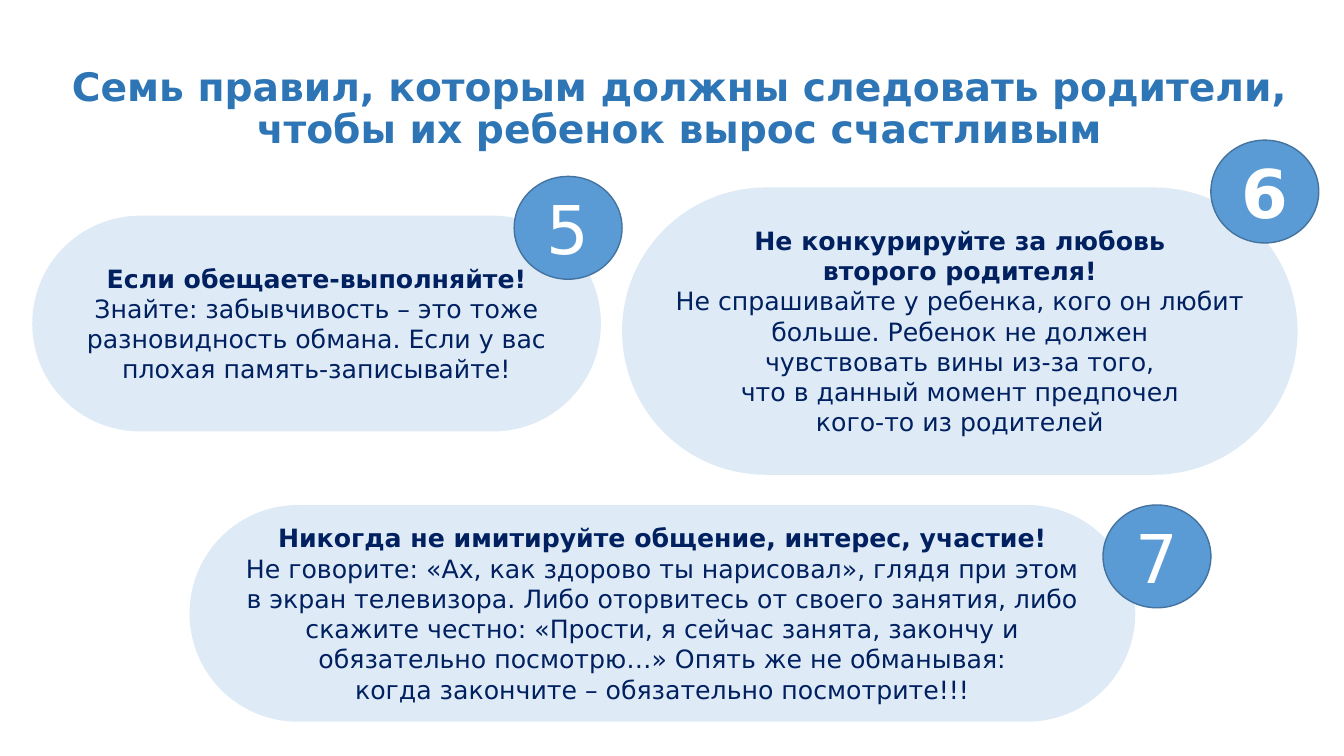
from pptx import Presentation
from pptx.dml.color import RGBColor
from pptx.enum.shapes import MSO_SHAPE as Shape
from pptx.enum.text import MSO_ANCHOR as Anchor, MSO_AUTO_SIZE as Fit, PP_ALIGN as Align
from pptx.util import Inches, Pt

BLUE, PALE, EDGE = "5B9BD5", "DEEBF7", "43739E"
NAVY, HEAD, WHITE = "002060", "2E75B6", "FFFFFF"

TITLE = "Семь правил, которым должны следовать родители, чтобы их ребенок вырос счастливым"
RULES = [
    ("5", False, (0.32, 2.14, 5.64, 2.14), (5.1, 1.75),
     ["Если обещаете-выполняйте!"],
     ["Знайте: забывчивость – это тоже разновидность обмана. Если у вас плохая память-записывайте!"]),
    ("6", True, (6.17, 1.86, 6.7, 2.85), (12.01, 1.39),
     ["Не конкурируйте за любовь", "второго родителя!"],
     ["Не спрашивайте у ребенка, кого он любит больше. Ребенок не должен",
      "чувствовать вины из-за того,",
      "что в данный момент предпочел",
      "кого-то из родителей"]),
    ("7", False, (1.88, 5.01, 9.38, 2.15), (10.94, 5.01),
     ["Никогда не имитируйте общение, интерес, участие!"],
     ["Не говорите: «Ах, как здорово ты нарисовал», глядя при этом",
      "в экран телевизора. Либо оторвитесь от своего занятия, либо скажите честно: "
      "«Прости, я сейчас занята, закончу и обязательно посмотрю…» Опять же не обманывая:",
      "когда закончите – обязательно посмотрите!!!"]),
]


def paint(target, color):
    """Give a fill or a line a solid colour."""
    target.solid()
    target.fore_color.rgb = RGBColor.from_string(color)


class Deck:
    font = "DejaVu Sans"

    def __init__(self):
        self.prs = Presentation()
        self.prs.slide_width, self.prs.slide_height = Inches(13.33), Inches(7.5)
        self.slide = self.prs.slides.add_slide(self.prs.slide_layouts[5])

    def label(self, frame, lines, size, color, anchor=Anchor.MIDDLE):
        """Fill a frame with centred (text, bold) paragraphs."""
        form = {"word_wrap": True, "auto_size": Fit.NONE, "vertical_anchor": anchor}
        for key, value in form.items():
            setattr(frame, key, value)
        for i, (text, bold) in enumerate(lines):
            para = frame.add_paragraph() if i else frame.paragraphs[0]
            para.alignment = Align.CENTER
            run = para.add_run()
            run.text = text
            for key, value in {"name": self.font, "size": Pt(size), "bold": bold}.items():
                setattr(run.font, key, value)
            paint(run.font.fill, color)

    def title(self, text, box):
        head = self.slide.shapes.title
        for key, value in zip(("left", "top", "width", "height"), box):
            setattr(head, key, Inches(value))
        self.label(head.text_frame, [(text, True)], 28, HEAD, Anchor.BOTTOM)
        head.text_frame.paragraphs[0].line_spacing = 0.9

    def shape(self, kind, box, fill):
        item = self.slide.shapes.add_shape(kind, *map(Inches, box))
        item.shadow.inherit = False
        paint(item.fill, fill)
        return item

    def card(self, box, heads, body):
        item = self.shape(Shape.ROUNDED_RECTANGLE, box, PALE)
        item.adjustments[0] = 0.5
        item.line.fill.background()
        lines = [(t, True) for t in heads] + [(t, False) for t in body]
        self.label(item.text_frame, lines, 18, NAVY)

    def badge(self, spot, digit, bold):
        item = self.shape(Shape.OVAL, (*spot, 1.07, 1.02), BLUE)
        paint(item.line.fill, EDGE)
        item.line.width = Pt(1)
        self.label(item.text_frame, [(digit, bold)], 48, WHITE)


def main():
    deck = Deck()
    deck.title(TITLE, (0.61, 0.22, 12.25, 1.34))
    for digit, bold, box, spot, heads, body in RULES:
        deck.card(box, heads, body)
        deck.badge(spot, digit, bold)
    deck.prs.save("out.pptx")


if __name__ == "__main__":
    main()
